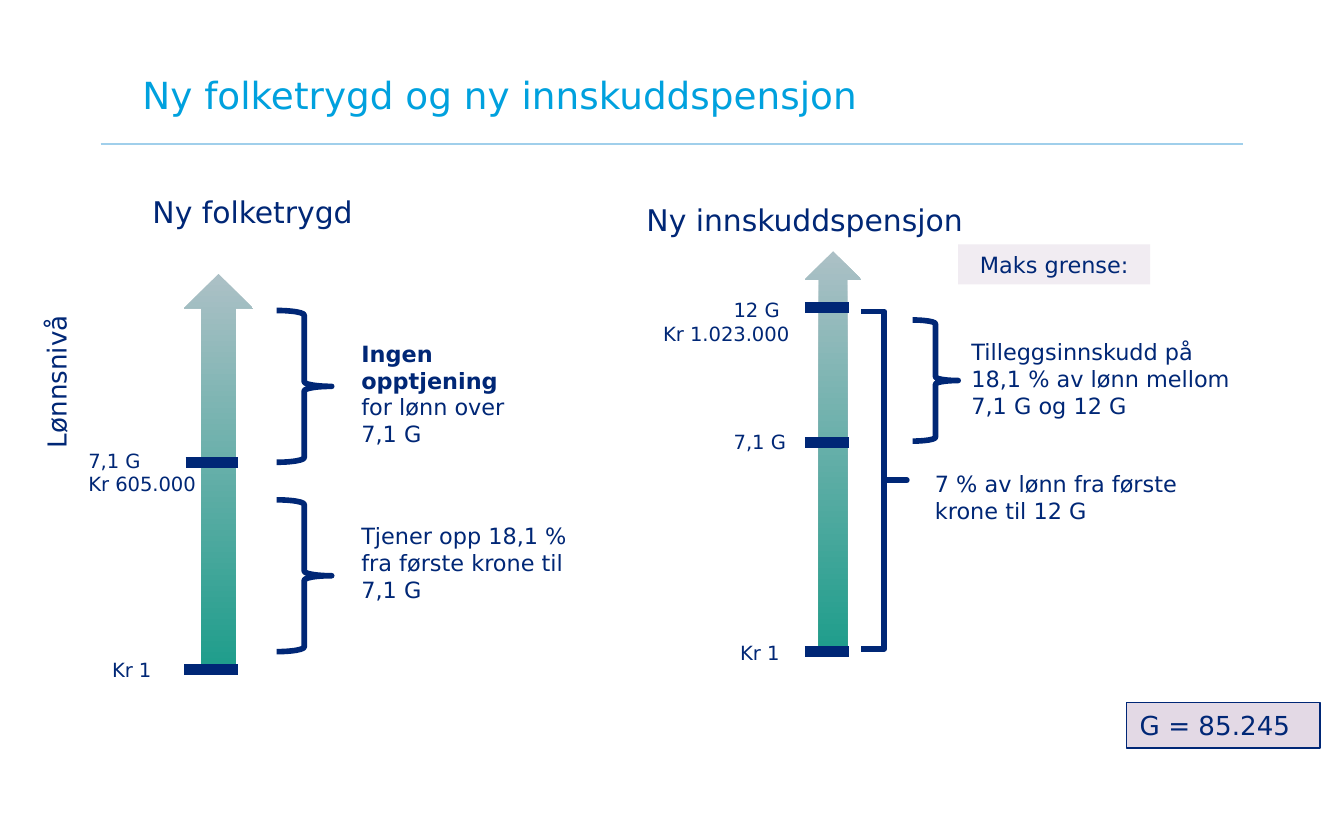
from pptx import Presentation
from pptx.dml.color import RGBColor
from pptx.enum.shapes import MSO_CONNECTOR as Link, MSO_SHAPE as Preset
from pptx.enum.text import MSO_ANCHOR as Anchor, PP_ALIGN as Align
from pptx.oxml.ns import qn
from pptx.util import Cm, Pt
from lxml.etree import SubElement

NAVY = RGBColor(0x00, 0x27, 0x76)
CYAN = RGBColor(0x00, 0xA1, 0xDE)
PALE_BLUE = RGBColor(0xA0, 0xCF, 0xEB)
GREY_BLUE = RGBColor(0xAC, 0xC0, 0xC6)
GREEN = RGBColor(0x1E, 0x9D, 0x8B)
PALE_LILAC = RGBColor(0xF1, 0xEC, 0xF2)
LILAC = RGBColor(0xE3, 0xD9, 0xE5)
FONT = "DejaVu Sans"
LABEL, BODY, LARGE, HEADING = 10.5, 12, 14, 16


class PensionPage:
    """Holds the style and the current slide, and draws each kind of element."""

    def __init__(self, deck):
        self.page = deck.slides.add_slide(deck.slide_layouts[5])
        self.shapes = self.page.shapes

    def style(self, frame, size, color=NAVY, align=Align.LEFT):
        for para in frame.paragraphs:
            para.alignment = align
            for span in para.runs:
                span.font.name = FONT
                span.font.size = Pt(size)
                span.font.color.rgb = color

    def title(self, text, left, top, width, height):
        box = self.shapes.title
        box.left, box.top, box.width, box.height = map(Cm, (left, top, width, height))
        frame = box.text_frame
        frame.text = text
        frame.vertical_anchor = Anchor.TOP
        frame.margin_left = frame.margin_right = Cm(0.71)
        frame.margin_top, frame.margin_bottom = Cm(0), Cm(0.1)
        frame.paragraphs[0].line_spacing = 0.95
        self.style(frame, 20, CYAN)

    def text(self, text, left, top, width, height, size=BODY, align=Align.LEFT):
        box = self.shapes.add_textbox(*map(Cm, (left, top, width, height)))
        box.text_frame.word_wrap = True
        box.text_frame.text = text
        self.style(box.text_frame, size, align=align)
        return box.text_frame

    def line(self, left, right, y, color=NAVY, weight=6):
        line = self.shapes.add_connector(Link.STRAIGHT, Cm(left), Cm(y), Cm(right), Cm(y))
        line.line.color.rgb = color
        line.line.width = Pt(weight)
        SubElement(line.element.spPr, qn("a:effectLst"))

    def shape(self, preset, left, top, width, height):
        shape = self.shapes.add_shape(preset, *map(Cm, (left, top, width, height)))
        shape.shadow.inherit = False
        return shape

    def arrow(self, *place):
        arrow = self.shape(Preset.UP_ARROW, *place)
        arrow.line.fill.background()
        arrow.fill.gradient()
        arrow.fill.gradient_angle = 270
        for stop, color in zip(arrow.fill.gradient_stops, (GREY_BLUE, GREEN)):
            stop.color.rgb = color

    def brace(self, *place):
        brace = self.shape(Preset.RIGHT_BRACE, *place)
        brace.fill.background()
        brace.line.color.rgb = NAVY
        brace.line.width = Pt(3)
        return brace

    def panel(self, text, left, top, width, height, fill, size, align):
        panel = self.shape(Preset.RECTANGLE, left, top, width, height)
        panel.fill.solid()
        panel.fill.fore_color.rgb = fill
        panel.line.fill.background()
        panel.text_frame.text = text
        panel.text_frame.vertical_anchor = Anchor.MIDDLE
        self.style(panel.text_frame, size, align=align)
        return panel


def draw_folketrygd(page):
    page.text("Kr 1", 1.78, 12.32, 1.42, 0.74, LABEL, Align.CENTER)
    axis = page.text("Lønnsnivå", 0.64, 5.31, 1.14, 3.81, LARGE, Align.CENTER)
    axis._txBody.bodyPr.set("vert", "vert270")
    page.text("7,1 G\nKr 605.000", 1.42, 8.36, 3.07, 1.14, LABEL)
    page.text("Ny folketrygd", 1.6, 3.53, 6.35, 0.84, HEADING, Align.CENTER)
    no_accrual = page.text("Ingen opptjening ", 6.58, 6.3, 3.3, 2.03)
    para = no_accrual.paragraphs[0]
    para.add_run().text = "for lønn over 7,1 G"
    page.style(no_accrual, BODY)
    para.runs[0].font.bold = True
    page.arrow(3.48, 5.18, 1.3, 7.47)
    page.line(3.48, 4.5, 12.65)
    page.line(3.51, 4.5, 8.74)
    for top in (5.87, 9.45):
        page.brace(5.23, top, 1.04, 2.87)
    page.text("Tjener opp 18,1 % fra første krone til 7,1 G", 6.58, 9.75, 4.72, 1.8)


def draw_innskuddspensjon(page):
    page.arrow(15.21, 4.75, 1.07, 7.59)
    for y in (5.82, 8.36, 12.32):
        page.line(15.21, 16.04, y)
    page.brace(17.25, 6.05, 0.86, 2.29)
    bracket = page.brace(16.28, 5.89, 0.86, 6.38)
    bracket.adjustments[0] = 0
    page.text("Ny innskuddspensjon", 11.3, 3.68, 7.82, 0.94, HEADING, Align.CENTER)
    page.panel("Maks grense:", 18.11, 4.62, 3.63, 0.76, PALE_LILAC, BODY, Align.CENTER)
    for label, top in (("7,1 G", 8), ("Kr 1", 11.99)):
        page.text(label, 13.51, top, 1.7, 0.7, LABEL, Align.CENTER)
    limit = page.text("12 G\nKr 1.023.000", 12.24, 5.51, 2.97, 1.14, LABEL, Align.CENTER)
    limit.paragraphs[0]._p.get_or_add_pPr().set("marL", str(Cm(1.15)))
    page.text("7 % av lønn fra første krone til 12 G", 17.42, 8.76, 5.21, 1.27)
    page.text("Tilleggsinnskudd på 18,1 % av lønn mellom 7,1 G og 12 G",
              18.11, 6.27, 5.56, 1.8)


def main():
    deck = Presentation()
    deck.slide_width, deck.slide_height = Cm(25.4), Cm(15.88)
    page = PensionPage(deck)
    page.line(1.9, 23.5, 2.72, PALE_BLUE, 1)
    page.title("Ny folketrygd og ny innskuddspensjon", 1.98, 1.42, 20.65, 1.27)
    draw_folketrygd(page)
    draw_innskuddspensjon(page)
    amount = page.panel("G = 85.245", 21.29, 13.28, 3.66, 0.86, LILAC, LARGE, Align.LEFT)
    amount.line.color.rgb = NAVY
    amount.line.width = Pt(0.75)
    deck.save("out.pptx")


if __name__ == "__main__":
    main()
